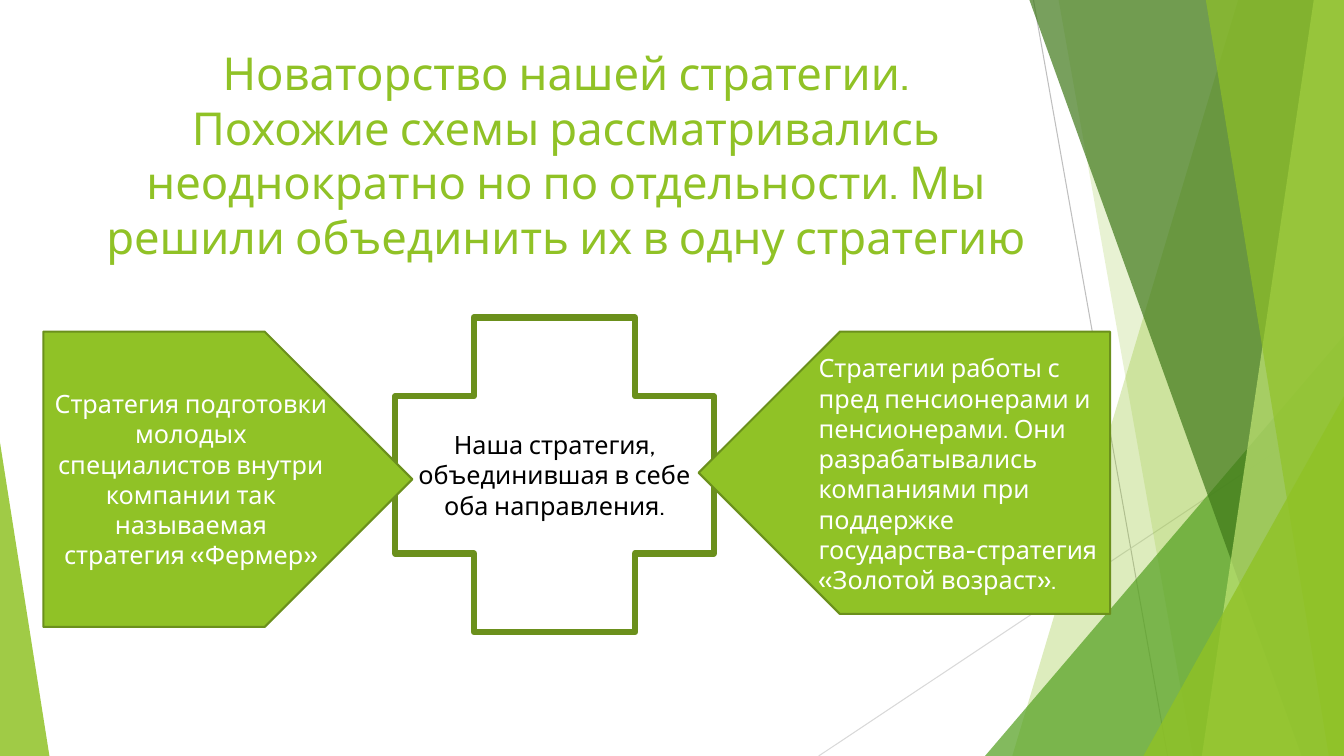
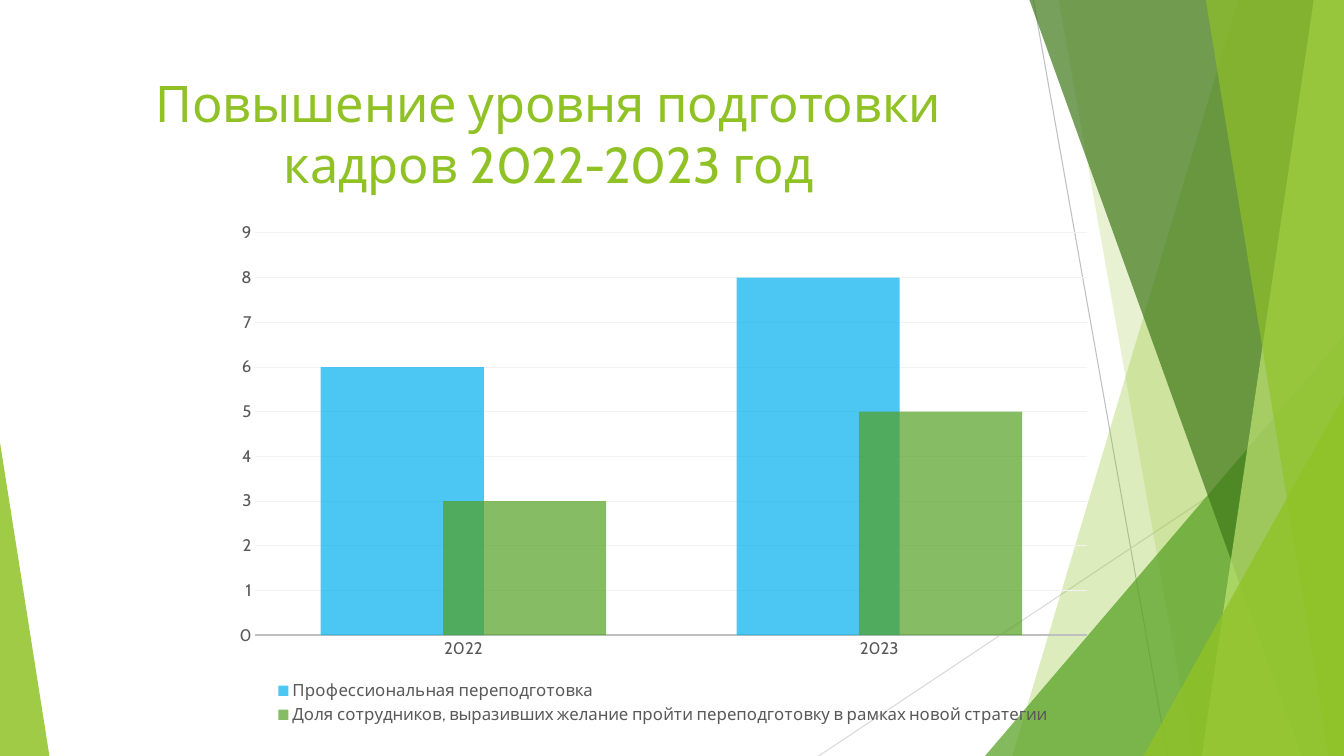
from lxml import etree
from pptx import Presentation
from pptx.chart.data import CategoryChartData
from pptx.dml.color import RGBColor
from pptx.enum.chart import XL_CHART_TYPE as CHART, XL_LEGEND_POSITION as LEGEND, XL_TICK_MARK as TICK
from pptx.enum.shapes import MSO_CONNECTOR as CONNECTOR, MSO_SHAPE as SHAPE
from pptx.enum.text import MSO_ANCHOR as ANCHOR, MSO_AUTO_SIZE as FIT, PP_ALIGN as ALIGN
from pptx.oxml.ns import qn
from pptx.util import Inches, Pt

FONT = "Cabin"
WIDTH, HEIGHT = 13.33, 7.5
COLORS = {
    "lime": "90C226", "green": "54A021", "forest": "3F7819", "pale": "C0E474",
    "olive": "6B901C", "blue": "00B0F0", "white": "FFFFFF", "black": "000000",
    "label": "595959", "axis": "BFBFBF", "ray": "D9D9D9", "grid": "F2F2F2",
}

RAYS = [((10.25, 0), (11.58, HEIGHT), "axis"), ((WIDTH, 4.03), (8.12, HEIGHT), "ray")]
# kind, geometry, colour, opacity
FACETS = [
    ("band", (12.28, 10.04), "lime", 30),
    ("band", (10.5, 11.83), "lime", 20),
    ("wedge", (9.77, 3.33, 3.56, 1), "green", 72),
    ("band", (10.21, 12.91), "forest", 70),
    ("band", (13.03, 11.92), "pale", 70),
    ("band", (11.96, 13.18), "lime", 65),
    ("wedge", (11.34, 3.93, 1.99, 1), "lime", 80),
    ("wedge", (0, 4.39, 0.49, 0), "lime", 85),
]

STRATEGY_TITLE = (
    "Новаторство нашей стратегии.\vПохожие схемы рассматривались неоднократно "
    "но по отдельности. Мы решили объединить их в одну стратегию"
)
COMBINED = "Наша стратегия, объединившая в себе оба направления."
FARMER = (
    "Стратегия подготовки молодых специалистов внутри компании "
    "так называемая стратегия «Фермер»"
)
GOLDEN_AGE = (
    "Стратегии работы с пред пенсионерами и пенсионерами. Они разрабатывались "
    "компаниями при поддержке государства-стратегия «Золотой возраст»."
)
FIGURES = [
    (SHAPE.CROSS, (3.92, 3.15, 3.16, 3.12), 0, "white", 4.5, COMBINED, "black"),
    (SHAPE.PENTAGON, (0.43, 3.29, 3.66, 2.93), 0, "lime", 1.5, FARMER, "white"),
    (SHAPE.PENTAGON, (6.93, 3.29, 4.08, 2.8), 180, "lime", 1.5, "", "white"),
]

TRAINING_TITLE = "Повышение уровня подготовки кадров 2022-2023 год"
YEARS = ["2022", "2023"]
TRAINING = [
    ("Профессиональная переподготовка", (6, 8), "blue"),
    ("Доля сотрудников, выразивших желание пройти переподготовку в рамках новой стратегии",
     (3, 5), "green"),
]


def rgb(name):
    return RGBColor.from_string(COLORS[name])


def inches(values):
    return [Inches(value) for value in values]


def paint(fill, color, opacity=100):
    fill.solid()
    fill.fore_color.rgb = rgb(color)
    if opacity < 100:
        for swatch in fill._xPr.iter(qn("a:srgbClr")):
            etree.SubElement(swatch, qn("a:alpha"), val=str(opacity * 1000))


def stroke(line, color, points):
    line.color.rgb = rgb(color)
    line.width = Pt(points)


def style_font(font, size, color):
    font.name, font.size = FONT, Pt(size)
    font.color.rgb = rgb(color)


def write(frame, text, size, color, align, anchor=ANCHOR.TOP):
    frame.word_wrap = True
    frame.auto_size = FIT.NONE
    frame.vertical_anchor = anchor
    frame.text = text
    paragraph = frame.paragraphs[0]
    paragraph.alignment = align
    style_font(paragraph.font, size, color)


def add_ray(shapes, start, end, color):
    ray = shapes.add_connector(CONNECTOR.STRAIGHT, *inches(start + end))
    stroke(ray.line, color, 0.75)
    etree.SubElement(ray.element.spPr, qn("a:effectLst"))


def add_facet(shapes, kind, geometry, color, opacity):
    if kind == "band":
        top_x, bottom_x = geometry
        outline = shapes.build_freeform(Inches(top_x), 0)
        corners = [(WIDTH, 0), (WIDTH, HEIGHT), (bottom_x, HEIGHT)]
        outline.add_line_segments([inches(corner) for corner in corners])
        facet = outline.convert_to_shape()
    else:
        left, top, width, apex = geometry
        facet = shapes.add_shape(SHAPE.ISOSCELES_TRIANGLE, *inches((left, top, width, HEIGHT - top)))
        facet.adjustments[0] = apex
    facet.shadow.inherit = False
    facet.line.fill.background()
    paint(facet.fill, color, opacity)


def decorate(layout, slide):
    """Draw the facets once and place them on the shared layout."""
    for holder in list(layout.placeholders)[1:]:
        holder.element.getparent().remove(holder.element)
    for ray in RAYS:
        add_ray(slide.shapes, *ray)
    for facet in FACETS:
        add_facet(slide.shapes, *facet)
    for decoration in list(slide.shapes)[1:]:
        layout.shapes.element.append(decoration.element)


def set_title(slide, text, box, size):
    title = slide.shapes.title
    title.left, title.top, title.width, title.height = inches(box)
    write(title.text_frame, text, size, "lime", ALIGN.CENTER)


def fill_strategy(slide):
    set_title(slide, STRATEGY_TITLE, (0.92, 0.4, 9.39, 3.07), 32.4)
    for preset, box, rotation, color, weight, text, ink in FIGURES:
        figure = slide.shapes.add_shape(preset, *inches(box))
        figure.shadow.inherit = False
        figure.rotation = rotation
        paint(figure.fill, color)
        stroke(figure.line, "olive", weight)
        if text:
            write(figure.text_frame, text, 18, ink, ALIGN.CENTER, ANCHOR.MIDDLE)
    golden_age = slide.shapes.add_textbox(*inches((8.02, 3.45, 2.98, 2.52)))
    write(golden_age.text_frame, GOLDEN_AGE, 18, "white", ALIGN.LEFT)


def fill_training(slide):
    set_title(slide, TRAINING_TITLE, (0.74, 0.67, 9.4, 1.44), 36)
    data = CategoryChartData()
    data.categories = YEARS
    for name, values, _ in TRAINING:
        data.add_series(name, values)
    box = inches((2.2, 2.11, 8.76, 5.12))
    chart = slide.shapes.add_chart(CHART.COLUMN_CLUSTERED, *box, data).chart
    style_font(chart.font, 10, "black")
    chart.has_title = False
    chart.has_legend = True
    chart.legend.position = LEGEND.BOTTOM
    chart.legend.include_in_layout = False
    style_font(chart.legend.font, 12, "label")

    years, counts = chart.category_axis, chart.value_axis
    for axis in (years, counts):
        axis.major_tick_mark = axis.minor_tick_mark = TICK.NONE
        style_font(axis.tick_labels.font, 12, "label")
    stroke(years.format.line, "axis", 1.25)
    counts.format.line.fill.background()
    counts.minimum_scale, counts.maximum_scale, counts.major_unit = 0, 9, 1
    stroke(counts.major_gridlines.format.line, "grid", 0.75)

    plot = chart.plots[0]
    plot.gap_width, plot.overlap, plot.vary_by_categories = 80, 25, False
    for series, (_, _, color) in zip(plot.series, TRAINING):
        paint(series.format.fill, color, 70)


def main():
    deck = Presentation()
    deck.slide_width, deck.slide_height = inches((WIDTH, HEIGHT))
    layout = deck.slide_layouts[5]
    strategy, training = (deck.slides.add_slide(layout) for _ in range(2))
    decorate(layout, strategy)
    fill_strategy(strategy)
    fill_training(training)
    deck.save("out.pptx")


if __name__ == "__main__":
    main()
